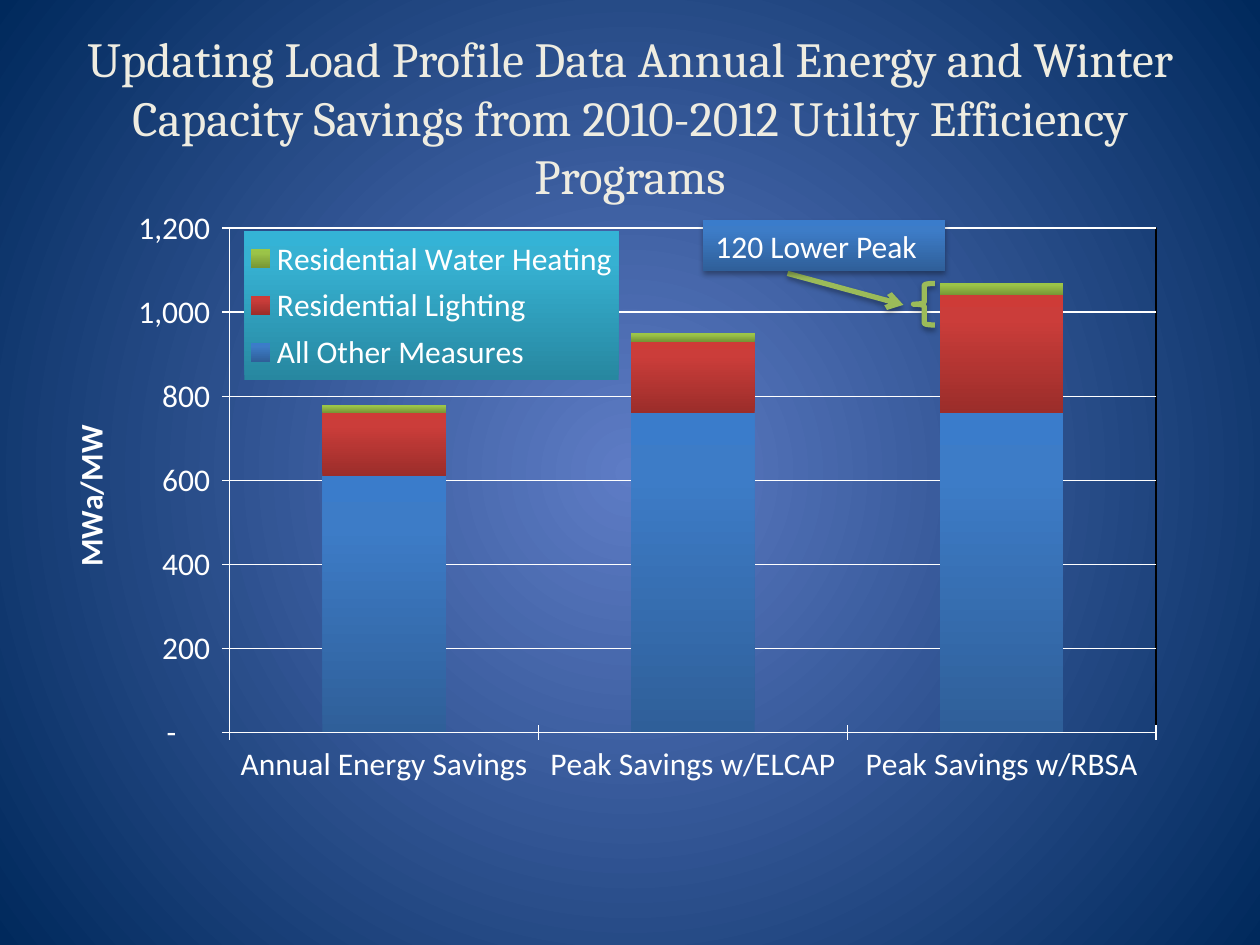
from dataclasses import dataclass

from pptx import Presentation
from pptx import util as u
from pptx.chart import data as chart_data
from pptx.dml.color import RGBColor
from pptx.enum import chart as chart_enum, shapes, text
from pptx.oxml import parse_xml
from pptx.oxml.ns import nsdecls, qn


@dataclass(frozen=True)
class Theme:
    """Colours, fonts and sizes of the slide."""
    heading_font: str = "Cambria"
    body_font: str = "Calibri"
    heading_size: int = 28
    body_size: int = 18
    heading: str = "EEECE1"
    light: str = "FFFFFF"
    dark: str = "000000"
    accent: str = "9BBB59"
    background: tuple = ((0, "5E7CC5"), (100, "00295C"))
    blue: tuple = ((0, "2F5F99"), (80, "3D7CC7"), (100, "3A7CCB"))
    red: tuple = ((0, "9B2D2A"), (80, "CB3D3A"), (100, "CE3B37"))
    green: tuple = ((0, "769535"), (80, "9BC348"), (100, "9CC746"))
    teal: tuple = ((0, "2787A0"), (80, "36B1D2"), (100, "34B3D6"))


THEME = Theme()


def set_font(font, name=THEME.body_font, size=THEME.body_size, color=THEME.light, bold=False):
    """Format a font."""
    font.name, font.size, font.bold = name, u.Pt(size), bold
    font.color.rgb = RGBColor.from_string(color)


def write_text(frame, words, align=text.PP_ALIGN.LEFT, **font_format):
    """Write one formatted paragraph into a text frame."""
    paragraph = frame.paragraphs[0]
    paragraph.alignment = align
    run = paragraph.add_run()
    run.text = words
    set_font(run.font, **font_format)


def gradient_xml(stops, circle=False):
    """Return a gradient fill, running upwards or out from the centre."""
    stop_list = "".join(
        f'<a:gs pos="{position * 1000}"><a:srgbClr val="{color}"/></a:gs>' for position, color in stops)
    direction = '<a:lin ang="16200000" scaled="0"/>'
    if circle:
        direction = ('<a:path path="circle"><a:fillToRect l="50000" t="50000" '
                     'r="50000" b="50000"/></a:path>')
    return (f'<a:gradFill {nsdecls("a")} rotWithShape="1"><a:gsLst>{stop_list}</a:gsLst>'
            f'{direction}</a:gradFill>')


def fill_gradient(fill, owner, stops, circle=False):
    """Give the owner of a fill its gradient."""
    fill.gradient()
    current = next(owner.iter(qn("a:gradFill")))
    current.getparent().replace(current, parse_xml(gradient_xml(stops, circle)))


def add_shadow(shape):
    """Add a soft shadow below a shape."""
    properties = shape._element.spPr
    for effects in properties.findall(qn("a:effectLst")):
        properties.remove(effects)
    properties.append(parse_xml(
        f'<a:effectLst {nsdecls("a")}><a:outerShdw blurRad="40000" dist="23000" dir="5400000" '
        f'rotWithShape="0"><a:srgbClr val="{THEME.dark}"><a:alpha val="35000"/></a:srgbClr>'
        '</a:outerShdw></a:effectLst>'))


def set_line(line, color, width):
    """Set the colour and width of a line."""
    line.color.rgb = RGBColor.from_string(color)
    line.width = u.Pt(width)


def layout_xml(left, top, width, height, inner=False):
    """Return a manual chart layout in fractions of the chart."""
    target = '<c:layoutTarget val="inner"/>' if inner else ""
    return parse_xml(
        f'<c:layout {nsdecls("c")}><c:manualLayout>{target}<c:xMode val="edge"/><c:yMode val="edge"/>'
        f'<c:x val="{left}"/><c:y val="{top}"/><c:w val="{width}"/><c:h val="{height}"/>'
        '</c:manualLayout></c:layout>')


def remove_layout(element):
    """Drop the automatic layout of a chart part."""
    for layout in element.findall(qn("c:layout")):
        element.remove(layout)


def add_title(slide, left, top, width, height):
    """Place the slide title."""
    title = slide.shapes.title
    title.left, title.top, title.width, title.height = map(u.Inches, (left, top, width, height))
    frame = title.text_frame
    frame.word_wrap = True
    frame.auto_size = text.MSO_AUTO_SIZE.NONE
    frame.vertical_anchor = text.MSO_ANCHOR.MIDDLE
    write_text(frame, "Updating Load Profile Data Annual Energy and Winter Capacity Savings "
               "from 2010-2012 Utility Efficiency Programs", align=text.PP_ALIGN.CENTER,
               name=THEME.heading_font, size=THEME.heading_size, color=THEME.heading)


def format_axes(chart):
    """Format both axes and the gridlines."""
    for axis in (chart.category_axis, chart.value_axis):
        axis.major_tick_mark = chart_enum.XL_TICK_MARK.CROSS
        set_line(axis.format.line, THEME.light, 0.75)
        set_font(axis.tick_labels.font)
    values = chart.value_axis
    values.minimum_scale, values.maximum_scale, values.major_unit = 0, 1200, 200
    values.tick_labels.number_format = '_(* #,##0_);_(* \\(#,##0\\);_(* "-"??_);_('
    values.tick_labels.number_format_is_linked = False
    set_line(values.major_gridlines.format.line, THEME.light, 0.75)
    frame = values.axis_title.text_frame
    write_text(frame, "MWa/MW", align=text.PP_ALIGN.CENTER, bold=True)
    frame._txBody.bodyPr.set("rot", "-5400000")
    frame._txBody.bodyPr.set("vert", "horz")


def format_legend(chart):
    """Place the legend on a shaded panel over the plot."""
    chart.has_legend = True
    legend = chart.legend
    legend.position = chart_enum.XL_LEGEND_POSITION.RIGHT
    legend.include_in_layout = False
    set_font(legend.font)
    remove_layout(legend._element)
    overlay = legend._element.find(qn("c:overlay"))
    overlay.addprevious(layout_xml(0.16, 0.05, 0.33, 0.23))
    overlay.addnext(parse_xml(f'<c:spPr {nsdecls("c", "a")}>{gradient_xml(THEME.teal)}</c:spPr>'))


def add_savings_chart(slide, left, top, width, height):
    """Place the stacked column chart of savings."""
    savings = chart_data.CategoryChartData()
    savings.categories = ["Annual Energy Savings", "Peak Savings w/ELCAP", "Peak Savings w/RBSA"]
    savings.add_series("All Other Measures", (610, 760, 760))
    savings.add_series("Residential Lighting", (150, 170, 280))
    savings.add_series("Residential Water Heating", (20, 20, 30))
    chart = slide.shapes.add_chart(
        chart_enum.XL_CHART_TYPE.COLUMN_STACKED, *map(u.Inches, (left, top, width, height)), savings).chart
    chart.has_title = False
    set_font(chart.font)
    plot = chart.plots[0]
    plot.vary_by_categories = False
    plot.gap_width, plot.overlap = 150, 100
    for series, stops in zip(plot.series, (THEME.blue, THEME.red, THEME.green)):
        fill_gradient(series.format.fill, series._element, stops)
    format_axes(chart)
    format_legend(chart)
    plot_area = plot._element.getparent()
    remove_layout(plot_area)
    plot_area.insert(0, layout_xml(0.147, 0.045, 0.817, 0.782, inner=True))
    plot_area.append(parse_xml(
        f'<c:spPr {nsdecls("c", "a")}><a:noFill/><a:ln w="9525"><a:solidFill>'
        f'<a:srgbClr val="{THEME.dark}"/></a:solidFill></a:ln></c:spPr>'))


def add_callout(slide, left, top, width, height):
    """Place the label, with its arrow and brace, beside the last column."""
    arrow = slide.shapes.add_connector(
        shapes.MSO_CONNECTOR.STRAIGHT,
        *map(u.Inches, (left + 0.67, top + 0.42, left + 1.59, top + 0.67)))
    brace = slide.shapes.add_shape(
        shapes.MSO_SHAPE.LEFT_BRACE, *map(u.Inches, (left + 1.67, top + 0.5, 0.17, 0.33)))
    brace.fill.background()
    label = slide.shapes.add_shape(
        shapes.MSO_SHAPE.RECTANGLE, *map(u.Inches, (left, top, width, height)))
    fill_gradient(label.fill, label._element, THEME.blue)
    label.line.fill.background()
    for shape in (arrow, brace):
        set_line(shape.line, THEME.accent, 3)
    arrow.line._get_or_add_ln().append(parse_xml(f'<a:tailEnd {nsdecls("a")} type="arrow"/>'))
    for shape in (arrow, brace, label):
        add_shadow(shape)
    label.text_frame.word_wrap = True
    label.text_frame.auto_size = text.MSO_AUTO_SIZE.SHAPE_TO_FIT_TEXT
    write_text(label.text_frame, "120 Lower Peak")


def main():
    """Build and save the presentation."""
    presentation = Presentation()
    presentation.slide_width, presentation.slide_height = u.Inches(10), u.Inches(7.5)
    slide = presentation.slides.add_slide(presentation.slide_layouts.get_by_name("Title Only"))
    fill_gradient(slide.background.fill, slide.element, THEME.background, circle=True)
    add_title(slide, 0.5, 0.3, 9, 1.25)
    add_savings_chart(slide, 0.5, 1.58, 9, 5.12)
    add_callout(slide, 5.58, 1.75, 1.92, 0.4)
    presentation.save("out.pptx")


if __name__ == "__main__":
    main()
